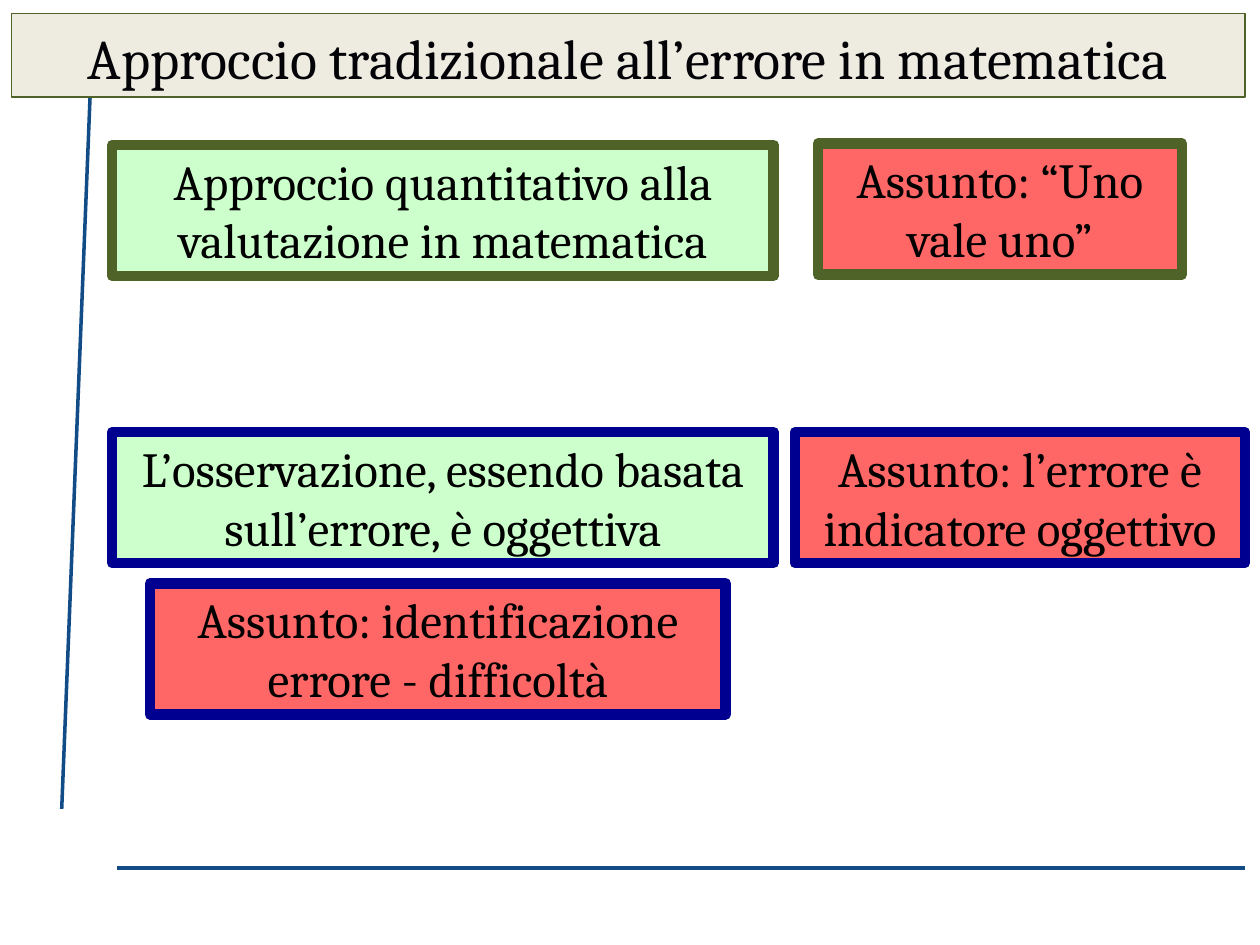
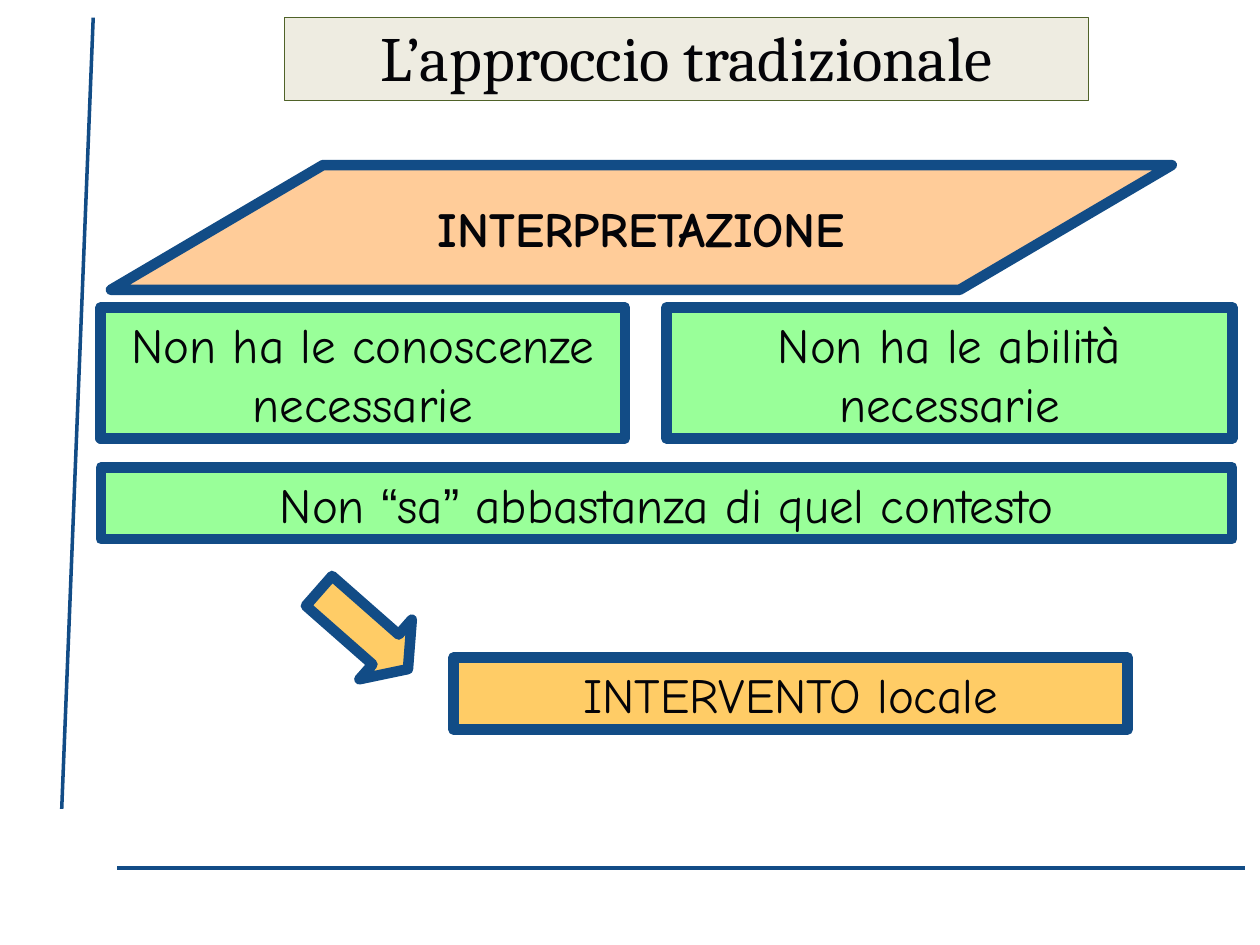
import pptx
import pptx.util
from pptx.dml.color import RGBColor
from pptx.enum.shapes import MSO_CONNECTOR, MSO_SHAPE
from pptx.enum.text import MSO_ANCHOR, PP_ALIGN
from pptx.oxml.xmlchemy import OxmlElement
from pptx.util import Inches

BLUE = RGBColor(0x12, 0x4C, 0x86)
NAVY = RGBColor(0x00, 0x00, 0x90)
OLIVE = RGBColor(0x4F, 0x62, 0x28)
CREAM = RGBColor(0xEE, 0xEC, 0xE1)
RED = RGBColor(0xFF, 0x66, 0x66)
MINT = RGBColor(0xCC, 0xFF, 0xCC)
GREEN = RGBColor(0x99, 0xFF, 0x99)
PEACH = RGBColor(0xFF, 0xCC, 0x99)
AMBER = RGBColor(0xFF, 0xCC, 0x66)
BLACK = RGBColor(0x00, 0x00, 0x00)
INK = RGBColor(0x04, 0x04, 0x08)

SERIF, HAND, QUOTE = "Cambria", "Comic Neue", "Arial"
BORDER = 6
ONE_LINE, TWO_LINES = 0.57, 1.04


def add_rule(s, x1, y1, x2, y2):
    rule = s.shapes.add_connector(
        MSO_CONNECTOR.STRAIGHT, Inches(x1), Inches(y1), Inches(x2), Inches(y2))
    rule.line.color.rgb = BLUE
    rule.line.width = pptx.util.Pt(2)
    rule._element.spPr.append(OxmlElement("a:effectLst"))


def add_figure(s, kind, box, fill, line, width=BORDER):
    sp = s.shapes.add_shape(kind, *(Inches(v) for v in box))
    sp.shadow.inherit = False
    sp.fill.solid()
    sp.fill.fore_color.rgb = fill
    sp.line.color.rgb = line
    sp.line.width = pptx.util.Pt(width)
    return sp


def write(sp, runs, size, color, anchor, bold=False, wrap=True):
    """Fill a shape with one centred paragraph of (text, font) runs."""
    tf = sp.text_frame
    tf.word_wrap = wrap
    tf.vertical_anchor = anchor
    p = tf.paragraphs[0]
    p.alignment = PP_ALIGN.CENTER
    for text, font in runs:
        r = p.add_run()
        r.text = text
        r.font.name = font
        r.font.size = pptx.util.Pt(size)
        r.font.bold = bold
        r.font.color.rgb = color


def add_base_slide(prs, title, box, size):
    """Add a slide with the two rules and the title band."""
    s = prs.slides.add_slide(prs.slide_layouts[6])
    add_rule(s, 0.74, 0.14, 0.49, 6.42)
    add_rule(s, 9.88, 6.89, 0.93, 6.89)
    band = add_figure(s, MSO_SHAPE.RECTANGLE, box, CREAM, OLIVE, 0.75)
    write(band, [(title, SERIF)], size, INK, MSO_ANCHOR.BOTTOM)
    return s


def add_claim(s, text, left, top, width, fill, line):
    sp = add_figure(s, MSO_SHAPE.RECTANGLE, (left, top, width, TWO_LINES), fill, line)
    write(sp, [(text, SERIF)], 28, BLACK, MSO_ANCHOR.TOP)


def add_cause(s, runs, left, top, width, height, fill=GREEN):
    sp = add_figure(s, MSO_SHAPE.RECTANGLE, (left, top, width, height), fill, BLUE)
    write(sp, runs, 28, INK, MSO_ANCHOR.BOTTOM)


def build_assumptions(prs):
    s = add_base_slide(prs, "Approccio tradizionale all’errore in matematica",
                       (0.09, 0.11, 9.79, 0.66), 32)
    for claim in (
        ("Assunto: “Uno vale uno”", 6.49, 1.14, 2.89, RED, OLIVE),
        ("Approccio quantitativo alla valutazione in matematica",
         0.89, 1.15, 5.25, MINT, OLIVE),
        ("L’osservazione, essendo basata sull’errore, è oggettiva",
         0.89, 3.43, 5.25, MINT, NAVY),
        ("Assunto: l’errore è indicatore oggettivo", 6.31, 3.43, 3.57, RED, NAVY),
        ("Assunto: identificazione errore - difficoltà", 1.19, 4.63, 4.57, RED, NAVY),
    ):
        add_claim(s, *claim)


def build_interpretation(prs):
    s = add_base_slide(prs, "L’approccio tradizionale", (2.26, 0.14, 6.38, 0.66), 36)
    heading = add_figure(s, MSO_SHAPE.FLOWCHART_DATA, (0.88, 1.31, 8.42, 0.99), PEACH, BLUE)
    write(heading, [("INTERPRETAZIONE", HAND)], 28, INK, MSO_ANCHOR.MIDDLE,
          bold=True, wrap=False)

    add_cause(s, [("Non ha le abilità necessarie", HAND)], 5.29, 2.44, 4.49, TWO_LINES)
    add_cause(s, [("Non ha le conoscenze necessarie", HAND)], 0.8, 2.44, 4.16, TWO_LINES)
    add_cause(s, [("Non ", HAND), ("“", QUOTE), ("sa", HAND), ("”", QUOTE),
                  (" abbastanza di quel contesto", HAND)], 0.8, 3.71, 8.98, ONE_LINE)

    arrow = add_figure(s, MSO_SHAPE.DOWN_ARROW, (2.57, 4.53, 0.63, 0.94), AMBER, BLUE)
    arrow.adjustments[0] = 0.5
    arrow.adjustments[1] = 0.375
    arrow.rotation = 311.3
    add_cause(s, [("INTERVENTO locale", HAND)], 3.6, 5.22, 5.35, ONE_LINE, AMBER)


def main():
    prs = pptx.Presentation()
    prs.slide_width = Inches(10)
    prs.slide_height = Inches(7.5)
    build_assumptions(prs)
    build_interpretation(prs)
    prs.save("out.pptx")


if __name__ == "__main__":
    main()
